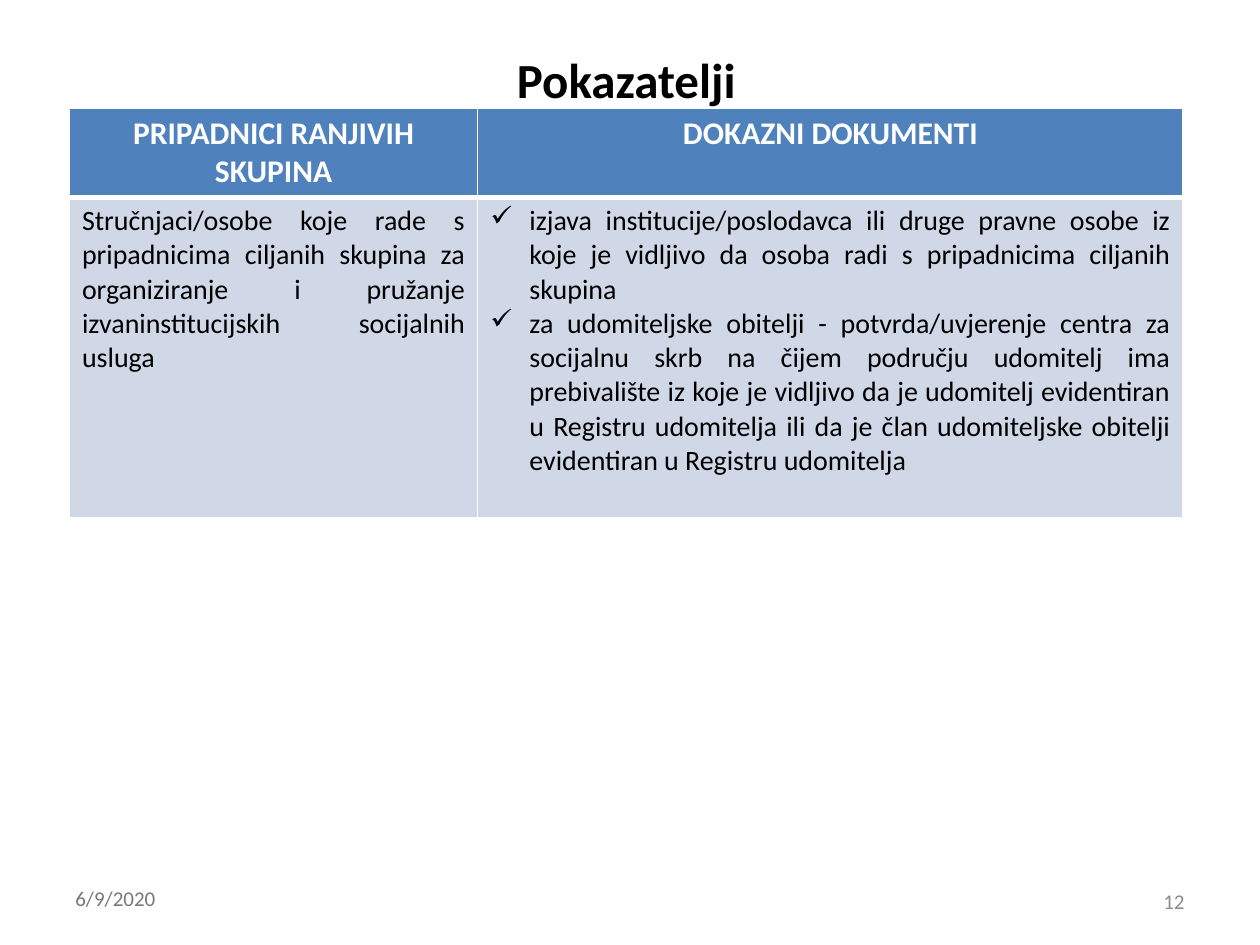
from dataclasses import dataclass

from lxml import etree
from pptx import Presentation
from pptx.dml import color
from pptx.enum import text
from pptx.oxml import ns
from pptx.util import Cm, Pt

RGB = color.RGBColor
ALIGN = text.PP_ALIGN
ANCHOR = text.MSO_ANCHOR


@dataclass(frozen=True)
class Theme:
    font: str = "Calibri"
    ink: str = "000000"
    white: str = "FFFFFF"
    header_fill: str = "4F81BD"
    body_fill: str = "D0D8E8"
    date_grey: str = "777877"
    number_grey: str = "8C8C8C"
    title_size: int = 28
    header_size: int = 18
    body_size: int = 16
    footer_size: int = 12
    thin: float = 1
    thick: float = 3


@dataclass(frozen=True)
class TextStyle:
    size: int
    color: str
    align: ALIGN
    bold: bool = False


@dataclass(frozen=True)
class Footer:
    words: str
    left: float
    top: float
    anchor: ANCHOR
    style: TextStyle


@dataclass(frozen=True)
class TableCell:
    paragraphs: tuple[str, ...]
    bulleted: bool = False


T = Theme()
TITLE = TextStyle(T.title_size, T.ink, ALIGN.CENTER, True)
HEADER = TextStyle(T.header_size, T.white, ALIGN.CENTER, True)
BODY = TextStyle(T.body_size, T.ink, ALIGN.JUSTIFY)

LEFT, TABLE_TOP = 1.4, 2.18
COLUMNS = (8.23, 14.22)
ROWS = (1.78, 6.45)
BULLET_INDENT = 0.79

CELLS = (
    (TableCell(("PRIPADNICI RANJIVIH SKUPINA",)), TableCell(("DOKAZNI DOKUMENTI",))),
    (
        TableCell((
            "Stručnjaci/osobe koje rade s pripadnicima ciljanih skupina za "
            "organiziranje i pružanje izvaninstitucijskih socijalnih usluga",
        )),
        TableCell((
            "izjava institucije/poslodavca ili druge pravne osobe iz koje je "
            "vidljivo da osoba radi s pripadnicima ciljanih skupina",
            "za udomiteljske obitelji - potvrda/uvjerenje centra za socijalnu "
            "skrb na čijem području udomitelj ima prebivalište iz koje je "
            "vidljivo da je udomitelj evidentiran u Registru udomitelja ili da "
            "je član udomiteljske obitelji evidentiran u Registru udomitelja",
        ), bulleted=True),
    ),
)

FOOTERS = (
    Footer("6/9/2020", 1.27, 17.73, ANCHOR.TOP,
           TextStyle(T.footer_size, T.date_grey, ALIGN.LEFT)),
    Footer("12", 18.21, 17.65, ANCHOR.MIDDLE,
           TextStyle(T.footer_size, T.number_grey, ALIGN.RIGHT)),
)


def add_check_bullet(p) -> None:
    pPr = p._p.get_or_add_pPr()
    pPr.set("marL", str(Cm(BULLET_INDENT)))
    pPr.set("indent", str(-Cm(BULLET_INDENT)))
    etree.SubElement(pPr, ns.qn("a:buChar")).set("char", "✓")


def write(tf, paragraphs: tuple[str, ...], style: TextStyle,
          bulleted: bool = False) -> None:
    for i, words in enumerate(paragraphs):
        p = tf.add_paragraph() if i else tf.paragraphs[0]
        if bulleted:
            add_check_bullet(p)
        p.alignment = style.align
        r = p.add_run()
        r.text = words
        r.font.name = T.font
        r.font.size = Pt(style.size)
        r.font.bold = style.bold
        r.font.color.rgb = RGB.from_string(style.color)


def set_borders(cell, top: float, bottom: float) -> None:
    tcPr = cell._tc.get_or_add_tcPr()
    widths = {"lnL": T.thin, "lnR": T.thin, "lnT": top, "lnB": bottom}
    for side, width in widths.items():
        ln = etree.SubElement(tcPr, ns.qn(f"a:{side}"), w=str(Pt(width)))
        fill = etree.SubElement(ln, ns.qn("a:solidFill"))
        etree.SubElement(fill, ns.qn("a:srgbClr"), val=T.white)


def add_title(s, words: str) -> None:
    sp = s.shapes.title
    sp.left, sp.top = Cm(LEFT), Cm(0)
    sp.width, sp.height = Cm(sum(COLUMNS)), Cm(3.18)
    sp.text_frame.vertical_anchor = ANCHOR.MIDDLE
    write(sp.text_frame, (words,), TITLE)


def add_indicator_table(s) -> None:
    table = s.shapes.add_table(
        len(ROWS), len(COLUMNS), Cm(LEFT), Cm(TABLE_TOP),
        Cm(sum(COLUMNS)), Cm(sum(ROWS))).table
    for column, width in zip(table.columns, COLUMNS):
        column.width = Cm(width)
    for i, (row, height) in enumerate(zip(table.rows, ROWS)):
        row.height = Cm(height)
        is_header = i == 0
        for cell, content in zip(row.cells, CELLS[i]):
            # The heavy rule lies between the header and the body.
            set_borders(cell, *((T.thin, T.thick) if is_header else (T.thick, T.thin)))
            cell.fill.solid()
            cell.fill.fore_color.rgb = RGB.from_string(
                T.header_fill if is_header else T.body_fill)
            write(cell.text_frame, content.paragraphs,
                  HEADER if is_header else BODY, content.bulleted)


def add_footer(s, footer: Footer) -> None:
    sp = s.shapes.add_textbox(Cm(footer.left), Cm(footer.top), Cm(5.92), Cm(1.02))
    tf = sp.text_frame
    tf.word_wrap = True
    tf.vertical_anchor = footer.anchor
    write(tf, (footer.words,), footer.style)


def main() -> None:
    prs = Presentation()
    prs.slide_width, prs.slide_height = Cm(25.4), Cm(19.05)
    s = prs.slides.add_slide(prs.slide_layouts.get_by_name("Title Only"))
    add_title(s, "Pokazatelji")
    add_indicator_table(s)
    for footer in FOOTERS:
        add_footer(s, footer)
    prs.save("out.pptx")


if __name__ == "__main__":
    main()
